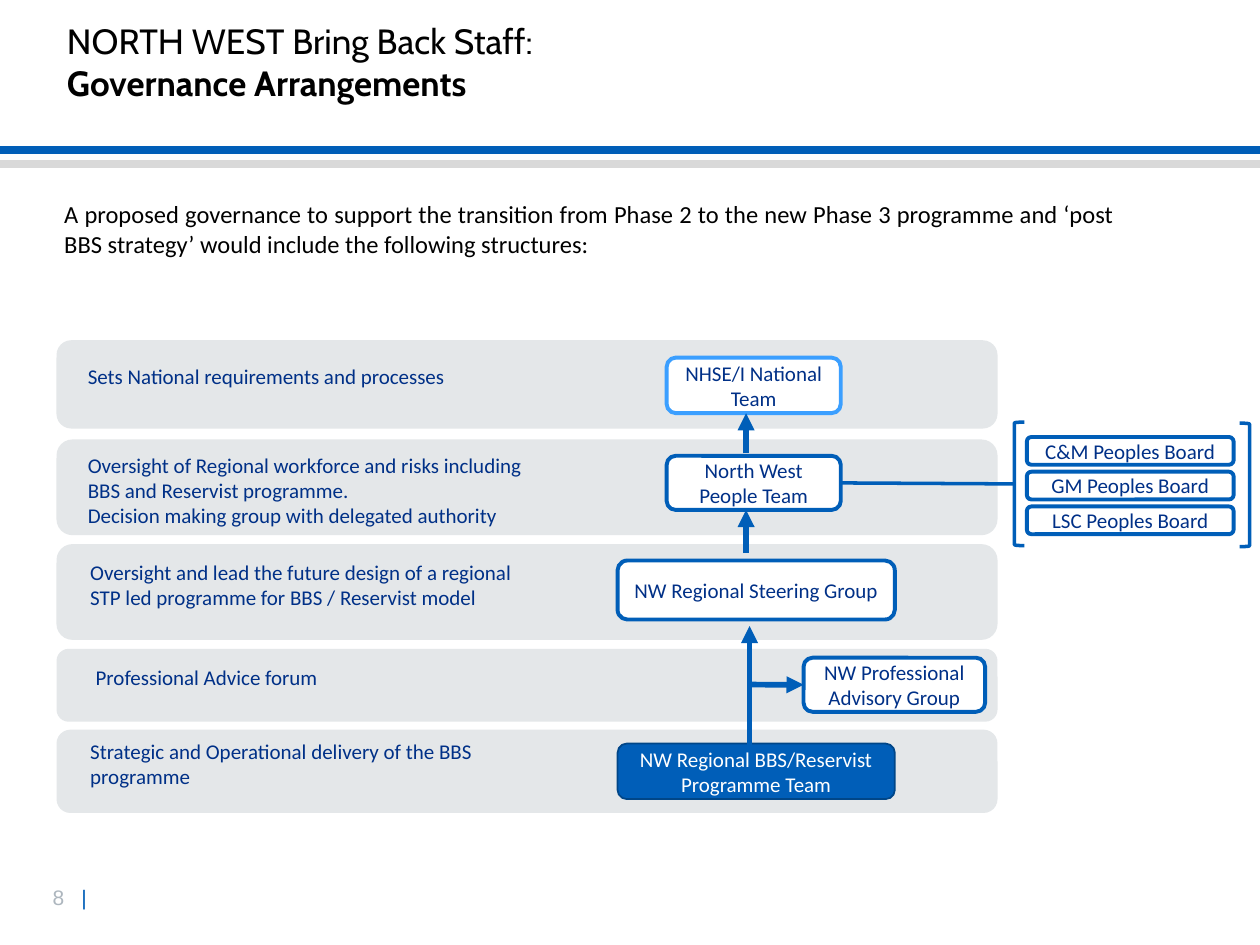
from pptx import Presentation
from pptx.dml.color import RGBColor
from pptx.enum.shapes import MSO_CONNECTOR, MSO_SHAPE
from pptx.enum.text import MSO_ANCHOR, MSO_AUTO_SIZE, PP_ALIGN
from pptx.oxml.ns import qn
from pptx.util import Cm, Pt
from lxml import etree

ROUND, BRACKET = MSO_SHAPE.ROUNDED_RECTANGLE, MSO_SHAPE.LEFT_BRACKET
LINE = MSO_CONNECTOR.STRAIGHT
TOP, MIDDLE, BOTTOM = MSO_ANCHOR.TOP, MSO_ANCHOR.MIDDLE, MSO_ANCHOR.BOTTOM
LEFT, CENTER, JUSTIFY = PP_ALIGN.LEFT, PP_ALIGN.CENTER, PP_ALIGN.JUSTIFY
BLUE = RGBColor(0x00, 0x5E, 0xB8)
NAVY = RGBColor(0x00, 0x30, 0x87)
SKY = RGBColor(0x3B, 0x9F, 0xFF)
EDGE = RGBColor(0x00, 0x46, 0x88)
PALE = RGBColor(0xE4, 0xE7, 0xE9)
SILVER = RGBColor(0xD9, 0xD9, 0xD9)
GREY = RGBColor(0xAD, 0xB6, 0xBE)
WHITE = RGBColor(0xFF, 0xFF, 0xFF)
BLACK = RGBColor(0, 0, 0)

# Content; all lengths in cm
HEAD = "NORTH WEST Bring Back Staff:\nGovernance Arrangements"
INTRO = ("A proposed governance to support the transition from Phase 2 to the new "
         "Phase 3 programme and ‘post BBS strategy’ would include the following structures:")
BAND_X, BAND_W = 1.14, 18.97
# band top, band height, label (left, top, width, height), label text
BANDS = [
    (6.86, 1.78, (1.52, 7.21, 10.72, 0.76), "Sets National requirements and processes"),
    (8.86, 1.93, (1.52, 8.99, 9.98, 1.8),
     "Oversight of Regional workforce and risks including BBS and Reservist programme.\n"
     "Decision making group with delegated authority"),
    (10.97, 1.93, (1.57, 11.15, 9.7, 1.27),
     "Oversight and lead the future design of a regional STP led programme "
     "for BBS / Reservist model"),
    (13.08, 1.47, (1.68, 13.28, 6.38, 0.76), "Professional Advice forum"),
    (14.71, 1.68, (1.57, 14.76, 9.78, 1.27),
     "Strategic and Operational delivery of the BBS programme"),
]
# name: place, text, fill, line, line width, text colour
BOXES = {
    "nation": ((13.44, 7.21, 3.51, 1.12), "NHSE/I National Team", WHITE, SKY, 2.25, NAVY),
    "people": ((13.44, 9.19, 3.51, 1.09), "North West People Team", WHITE, BLUE, 2.25, NAVY),
    "steer": ((12.45, 11.3, 5.59, 1.19), "NW Regional Steering Group", WHITE, BLUE, 2.25, NAVY),
    "advice": ((16.2, 13.26, 3.66, 1.09), "NW Professional Advisory Group",
               WHITE, BLUE, 2.25, NAVY),
    "team": ((12.45, 14.99, 5.59, 1.12), "NW Regional BBS/Reservist\nProgramme Team",
             BLUE, EDGE, 1, WHITE),
}
BOARDS = ["C&M Peoples Board", "GM Peoples Board", "LSC Peoples Board"]
BOARD_X, BOARD_Y, BOARD_W, BOARD_H, BOARD_STEP = 20.7, 8.81, 4.17, 0.56, 0.7
# bracket place, turn
BRACKETS = [((20.45, 8.51, 0.2, 2.49), 0), ((24.99, 8.53, 0.2, 2.49), 180)]
# upward arrows: x, from y, to y
ARROWS = [(15.11, 15.06, 12.62), (15.04, 11.15, 10.28), (15.04, 9.14, 8.33)]
RULES = [(3.02, BLUE), (3.3, SILVER)]

deck = Presentation()
deck.slide_width, deck.slide_height = Cm(25.4), Cm(19.05)
slide = deck.slides.add_slide(deck.slide_layouts[1])
shapes = slide.shapes


def cms(place):
    return [Cm(v) for v in place]


def write(shape, text, size, color, font="Calibri", align=LEFT, anchor=TOP):
    frame = shape.text_frame
    frame.text = text
    frame.word_wrap = True
    frame.auto_size = MSO_AUTO_SIZE.NONE
    frame.vertical_anchor = anchor
    for para in frame.paragraphs:
        para.alignment = align
        para.space_before = Pt(0)
        for run in para.runs:
            run.font.name, run.font.size = font, Pt(size)
            run.font.color.rgb = color
    return frame


def move(shape, place):
    shape.left, shape.top, shape.width, shape.height = cms(place)


def block(place, fill, line=None, width=1):
    shape = shapes.add_shape(ROUND, *cms(place))
    shape.shadow.inherit = False
    shape.fill.solid()
    shape.fill.fore_color.rgb = fill
    if line is None:
        shape.line.fill.background()
    else:
        shape.line.color.rgb = line
        shape.line.width = Pt(width)
    return shape


def node(place, text, fill, line, width, color):
    shape = block(place, fill, line, width)
    write(shape, text, 12, color, align=CENTER, anchor=MIDDLE)
    return shape


def link(x1, y1, x2, y2, color, width, arrow=False):
    wire = shapes.add_connector(LINE, *cms((x1, y1, x2, y2)))
    wire.line.color.rgb = color
    wire.line.width = Pt(width)
    if arrow:
        etree.SubElement(wire.line._get_or_add_ln(), qn("a:tailEnd"), type="triangle")
    etree.SubElement(wire._element.spPr, qn("a:effectLst"))
    return wire


# Title and intro
title, body = shapes.title, slide.placeholders[1]
move(title, (1.35, 0.33, 20.5, 1.88))
frame = write(title, HEAD, 20, BLACK, "Cabin", anchor=BOTTOM)
frame.margin_left = frame.margin_right = 0
frame.paragraphs[1].runs[0].font.bold = True

move(body, (1.04, 3.89, 21.69, 2.06))
para = write(body, INTRO, 14, BLACK, align=JUSTIFY).paragraphs[0]
props = para._p.get_or_add_pPr()
props.set("marL", "0")
props.set("indent", "0")
etree.SubElement(props, qn("a:buNone"))

# Header rules
for y, color in RULES:
    link(0, y, 25.4, y, color, 4.5)

# Bands with their labels
for top, height, place, text in BANDS:
    block((BAND_X, top, BAND_W, height), PALE)
    write(shapes.add_textbox(*cms(place)), text, 12, NAVY)

# Groups and boards
nodes = {name: node(*box) for name, box in BOXES.items()}
for i, text in enumerate(BOARDS):
    node((BOARD_X, BOARD_Y + i * BOARD_STEP, BOARD_W, BOARD_H),
         text, WHITE, BLUE, 2.25, NAVY)

pair = []
for place, turn in BRACKETS:
    shape = shapes.add_shape(BRACKET, *cms(place))
    shape.shadow.inherit = False
    shape.fill.background()
    shape.line.color.rgb = BLUE
    shape.line.width = Pt(2)
    shape.rotation = turn
    pair.append(shape)

# Links
for x, start, end in ARROWS:
    link(x, start, x, end, BLUE, 3.25, True)
wire = link(15.11, 13.8, 16.2, 13.8, BLUE, 3.25, True)
wire.end_connect(nodes["advice"], 1)
wire = link(16.95, 9.74, 20.45, 9.76, BLUE, 2)
wire.begin_connect(nodes["people"], 3)
wire.end_connect(pair[0], 1)

# Page number
box = shapes.add_textbox(*cms((0.81, 17.7, 1.8, 0.76)))
para = write(box, "8\t", 12, GREY, "Arial").paragraphs[0]
tabs = etree.SubElement(para._p.get_or_add_pPr(), qn("a:tabLst"))
etree.SubElement(tabs, qn("a:tab"), pos=str(Cm(0.58)), algn="l")
bar = para.add_run()
bar.text = "|"
bar.font.name, bar.font.size = "Arial", Pt(12)
bar.font.color.rgb = BLUE

deck.save("out.pptx")
